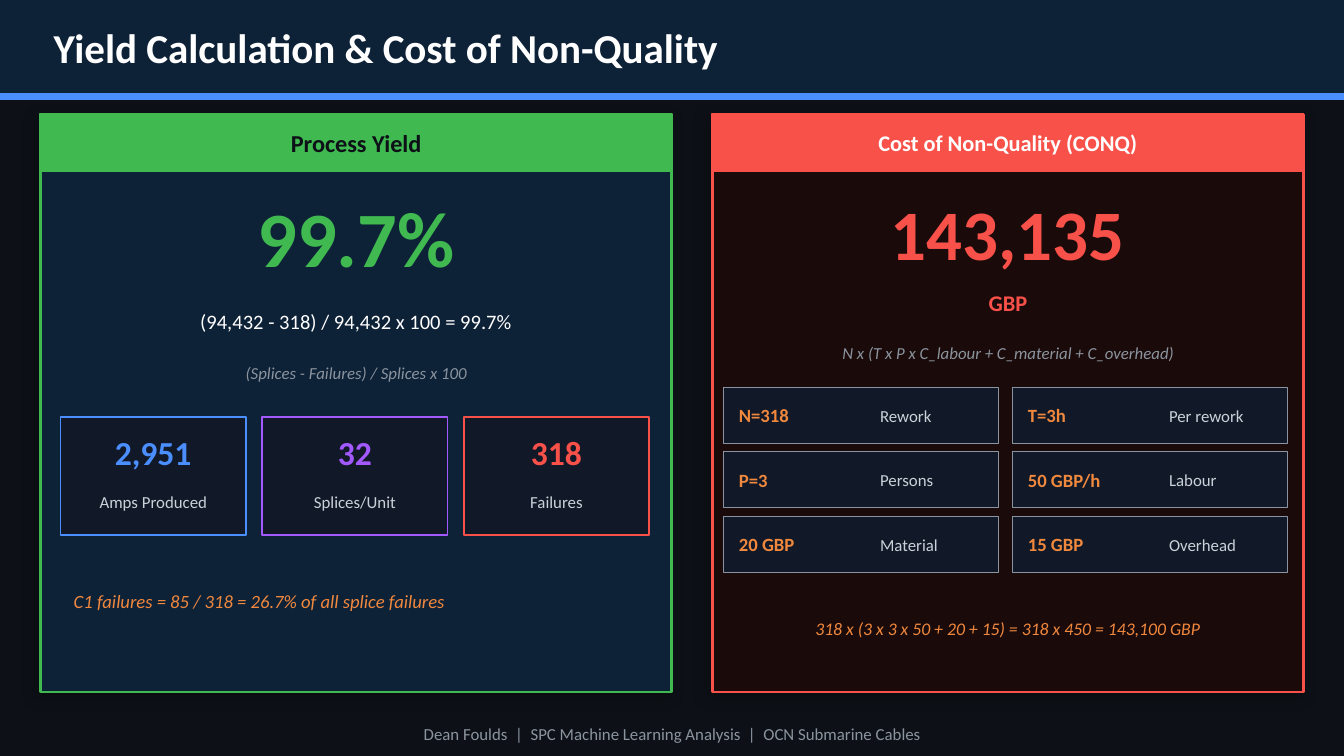
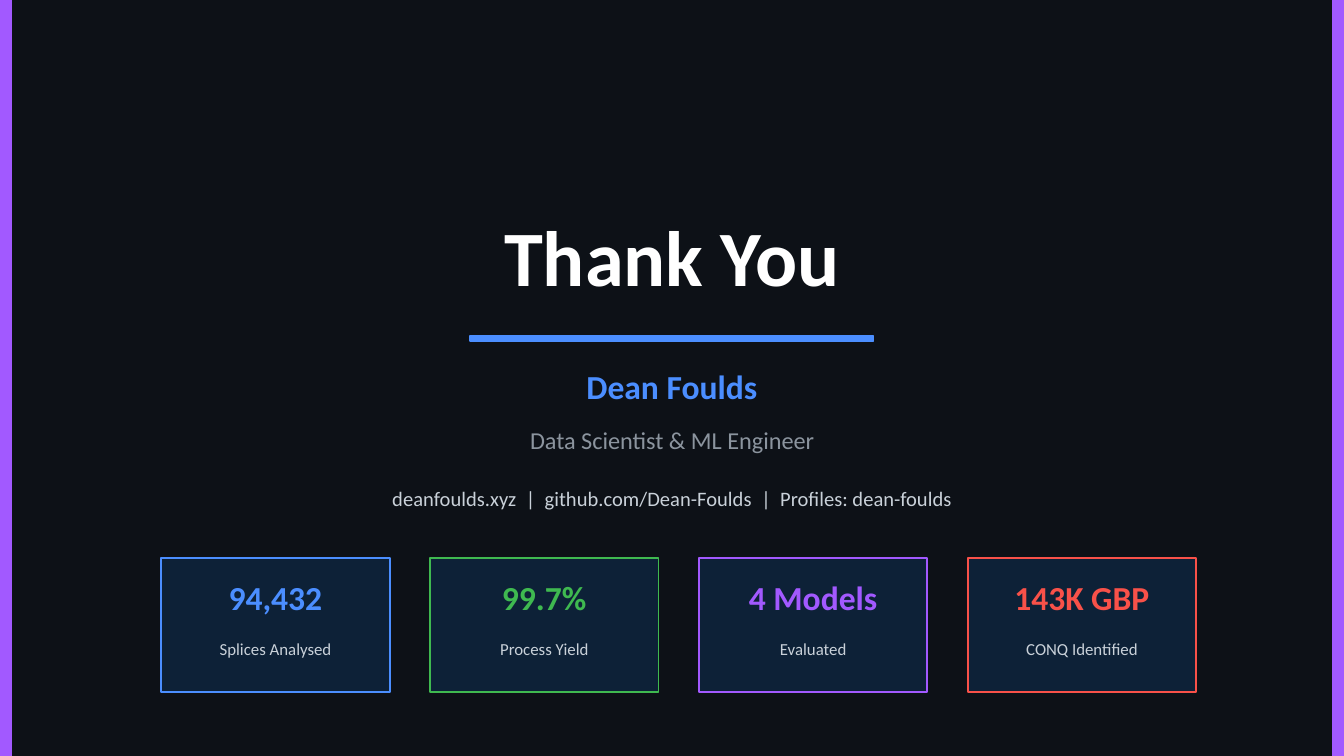
import pptx
import pptx.util
import pptx.dml.color
import pptx.enum.shapes
import pptx.enum.text
import pptx.oxml.ns
import lxml.etree

Inches, Pt = pptx.util.Inches, pptx.util.Pt
ALIGN = {"left": pptx.enum.text.PP_ALIGN.LEFT, "center": pptx.enum.text.PP_ALIGN.CENTER}
WIDTH = 10
HEIGHT = WIDTH * 9 / 16
FONT = "Calibri"
SEPARATOR = " | "
COLORS = {
    "background": "0D1117", "navy": "0D2137", "card": "111827", "maroon": "1A0A0A",
    "blue": "4B8EFF", "green": "3FB950", "purple": "A259FF", "red": "F85149",
    "orange": "F0883E", "white": "FFFFFF", "light": "C9D1D9", "grey": "8B949E",
    "black": "000000",
}


def rgb(name):
    """Return the named colour."""
    return pptx.dml.color.RGBColor.from_string(COLORS[name])


def new_slide(prs):
    """Add a blank slide with the dark background."""
    s = prs.slides.add_slide(prs.slide_layouts[6])
    s.background.fill.solid()
    s.background.fill.fore_color.rgb = rgb("background")
    return s


def add_rect(s, x, y, w, h, fill, line=None, weight=1):
    """Draw a filled rectangle, outlined in its own fill unless told otherwise."""
    sp = s.shapes.add_shape(pptx.enum.shapes.MSO_SHAPE.RECTANGLE,
                            Inches(x), Inches(y), Inches(w), Inches(h))
    sp.shadow.inherit = False
    sp.fill.solid()
    sp.fill.fore_color.rgb = rgb(fill)
    sp.line.color.rgb = rgb(line or fill)
    sp.line.width = Pt(weight)
    return sp


def add_shadow(sp):
    """Give a shape a soft, faint shadow to the lower left."""
    qn = pptx.oxml.ns.qn
    effects = sp._element.spPr.find(qn("a:effectLst"))
    shadow = lxml.etree.SubElement(effects, qn("a:outerShdw"), blurRad=str(Pt(8)),
                                   dist=str(Pt(3)), dir=str(135 * 60000),
                                   algn="bl", rotWithShape="0")
    color = lxml.etree.SubElement(shadow, qn("a:srgbClr"), val=COLORS["black"])
    lxml.etree.SubElement(color, qn("a:alpha"), val="25000")


def add_text(s, text, x, y, w, h, size=9, color="light", bold=False, italic=False,
             align="center", margin=None):
    """Add a one-line text box, with wider spaces around separators."""
    tf = s.shapes.add_textbox(Inches(x), Inches(y), Inches(w), Inches(h)).text_frame
    tf.word_wrap = True
    tf.vertical_anchor = pptx.enum.text.MSO_ANCHOR.MIDDLE
    if margin is not None:
        tf.margin_left = tf.margin_right = tf.margin_top = tf.margin_bottom = Inches(margin)
    p = tf.paragraphs[0]
    p.alignment = ALIGN[align]
    for i, part in enumerate(text.split(SEPARATOR)):
        for piece in (list(SEPARATOR) if i else []) + [part]:
            r = p.add_run()
            r.text = piece
            r.font.name, r.font.size = FONT, Pt(size)
            r.font.bold, r.font.italic = bold, italic
            r.font.color.rgb = rgb(color)
            if piece == " ":
                r.font._element.set("spc", str(round(size * 23)))


def add_header(s, title):
    """Draw the title band with its accent rule."""
    add_rect(s, 0, 0, WIDTH, 0.7, "navy")
    add_rect(s, 0, 0.7, WIDTH, 0.04, "blue")
    add_text(s, title, 0.4, 0, 8.5, 0.7, size=22, color="white", bold=True,
             align="left", margin=0)


def add_footer(s, text):
    """Write the footer line."""
    add_text(s, text, 0, 5.3, WIDTH, 0.32, color="grey")


def add_panel(s, x, y, w, h, title, fill, accent, title_color, title_size):
    """Draw a shadowed panel with a coloured title bar."""
    add_shadow(add_rect(s, x, y, w, h, fill, accent, 1.5))
    add_rect(s, x, y, w, 0.42, accent)
    add_text(s, title, x, y, w, 0.42, size=title_size, color=title_color, bold=True)


def add_stat_card(s, x, y, w, h, value, label, accent, fill, value_h, label_h):
    """Draw an outlined card holding a figure over its label."""
    add_rect(s, x, y, w, h, fill, accent)
    add_text(s, value, x, y + 0.05, w, value_h, size=18, color=accent, bold=True)
    add_text(s, label, x, y + 0.05 + value_h, w, label_h)


def add_yield_panel(s, x, y, w, h):
    """Build the process yield panel."""
    add_panel(s, x, y, w, h, "Process Yield", "navy", "green", "background", 13)
    left, inner = x + 0.15, w - 0.3
    add_text(s, "99.7%", x, y + 0.5, w, 0.82, size=42, color="green", bold=True)
    add_text(s, "(94,432 - 318) / 94,432 x 100 = 99.7%", left, y + 1.35, inner, 0.38,
             size=11, color="white")
    add_text(s, "(Splices - Failures) / Splices x 100", left, y + 1.75, inner, 0.35,
             color="grey", italic=True)
    stats = [("2,951", "Amps Produced", "blue"), ("32", "Splices/Unit", "purple"),
             ("318", "Failures", "red")]
    for i, (value, label, accent) in enumerate(stats):
        add_stat_card(s, left + 1.5 * i, y + 2.25, 1.38, 0.88, value, label, accent,
                      "card", 0.42, 0.32)
    add_text(s, "C1 failures = 85 / 318 = 26.7% of all splice failures", left, y + 3.25,
             inner, 0.75, size=10, color="orange", italic=True, align="left")


def add_cost_input(s, x, y, value, label):
    """Draw one input of the cost formula."""
    add_rect(s, x, y, 2.05, 0.42, "card", "grey", 0.5)
    add_text(s, value, x + 0.02, y + 0.02, 1.05, 0.38, size=10, color="orange",
             bold=True, align="left")
    add_text(s, label, x + 1.07, y + 0.02, 0.95, 0.38, align="left")


def add_cost_panel(s, x, y, w, h):
    """Build the cost of non-quality panel."""
    add_panel(s, x, y, w, h, "Cost of Non-Quality (CONQ)", "maroon", "red", "white", 12)
    left, inner = x + 0.1, w - 0.2
    add_text(s, "143,135", x, y + 0.47, w, 0.82, size=38, color="red", bold=True)
    add_text(s, "GBP", x, y + 1.25, w, 0.3, size=12, color="red", bold=True)
    add_text(s, "N x (T x P x C_labour + C_material + C_overhead)", left, y + 1.6,
             inner, 0.35, color="grey", italic=True)
    inputs = [("N=318", "Rework"), ("T=3h", "Per rework"), ("P=3", "Persons"),
              ("50 GBP/h", "Labour"), ("20 GBP", "Material"), ("15 GBP", "Overhead")]
    for i, (value, label) in enumerate(inputs):
        row, col = divmod(i, 2)
        add_cost_input(s, x + 0.08 + 2.15 * col, y + 2.03 + 0.48 * row, value, label)
    add_text(s, "318 x (3 x 3 x 50 + 20 + 15) = 318 x 450 = 143,100 GBP", left, y + 3.5,
             inner, 0.65, size=9.5, color="orange", italic=True)


def build_yield_slide(prs):
    """Build the yield and cost slide."""
    s = new_slide(prs)
    add_header(s, "Yield Calculation & Cost of Non-Quality")
    add_footer(s, "Dean Foulds | SPC Machine Learning Analysis | OCN Submarine Cables")
    add_yield_panel(s, 0.3, 0.85, 4.7, 4.3)
    add_cost_panel(s, 5.3, 0.85, 4.4, 4.3)


def add_sign_off(s, x, y, w):
    """Write the thanks, the rule and the contact lines."""
    add_text(s, "Thank You", x, y, w, 1, size=42, color="white", bold=True)
    add_rect(s, x + (w - 3) / 2, y + 1.1, 3, 0.04, "blue")
    add_text(s, "Dean Foulds", x, y + 1.25, w, 0.45, size=18, color="blue", bold=True)
    add_text(s, "Data Scientist & ML Engineer", x, y + 1.7, w, 0.35, size=13, color="grey")
    add_text(s, "deanfoulds.xyz | github.com/Dean-Foulds | Profiles: dean-foulds",
             x, y + 2.15, w, 0.32, size=11)


def build_closing_slide(prs):
    """Build the thank-you slide."""
    s = new_slide(prs)
    for x in (0, WIDTH - 0.08):
        add_rect(s, x, 0, 0.08, HEIGHT, "purple")
    add_sign_off(s, 1, 1.4, 8)
    stats = [("94,432", "Splices Analysed", "blue"), ("99.7%", "Process Yield", "green"),
             ("4 Models", "Evaluated", "purple"), ("143K GBP", "CONQ Identified", "red")]
    for i, (value, label, accent) in enumerate(stats):
        add_stat_card(s, 1.2 + 2 * i, 4.15, 1.7, 1, value, label, accent, "navy", 0.48, 0.3)


def main():
    """Build and save the presentation."""
    prs = pptx.Presentation()
    prs.slide_width, prs.slide_height = Inches(WIDTH), Inches(HEIGHT)
    build_yield_slide(prs)
    build_closing_slide(prs)
    prs.save("out.pptx")


if __name__ == "__main__":
    main()
